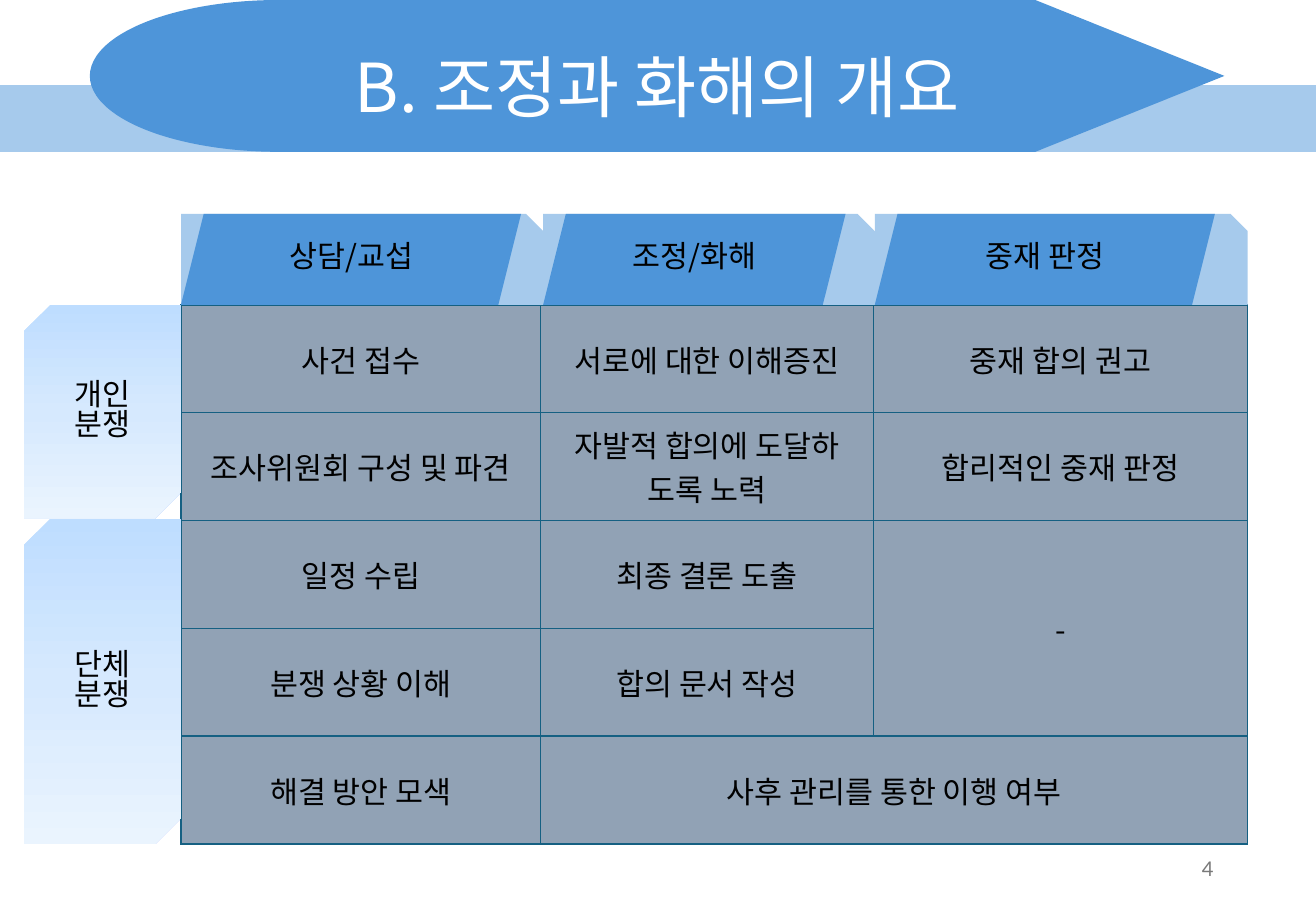
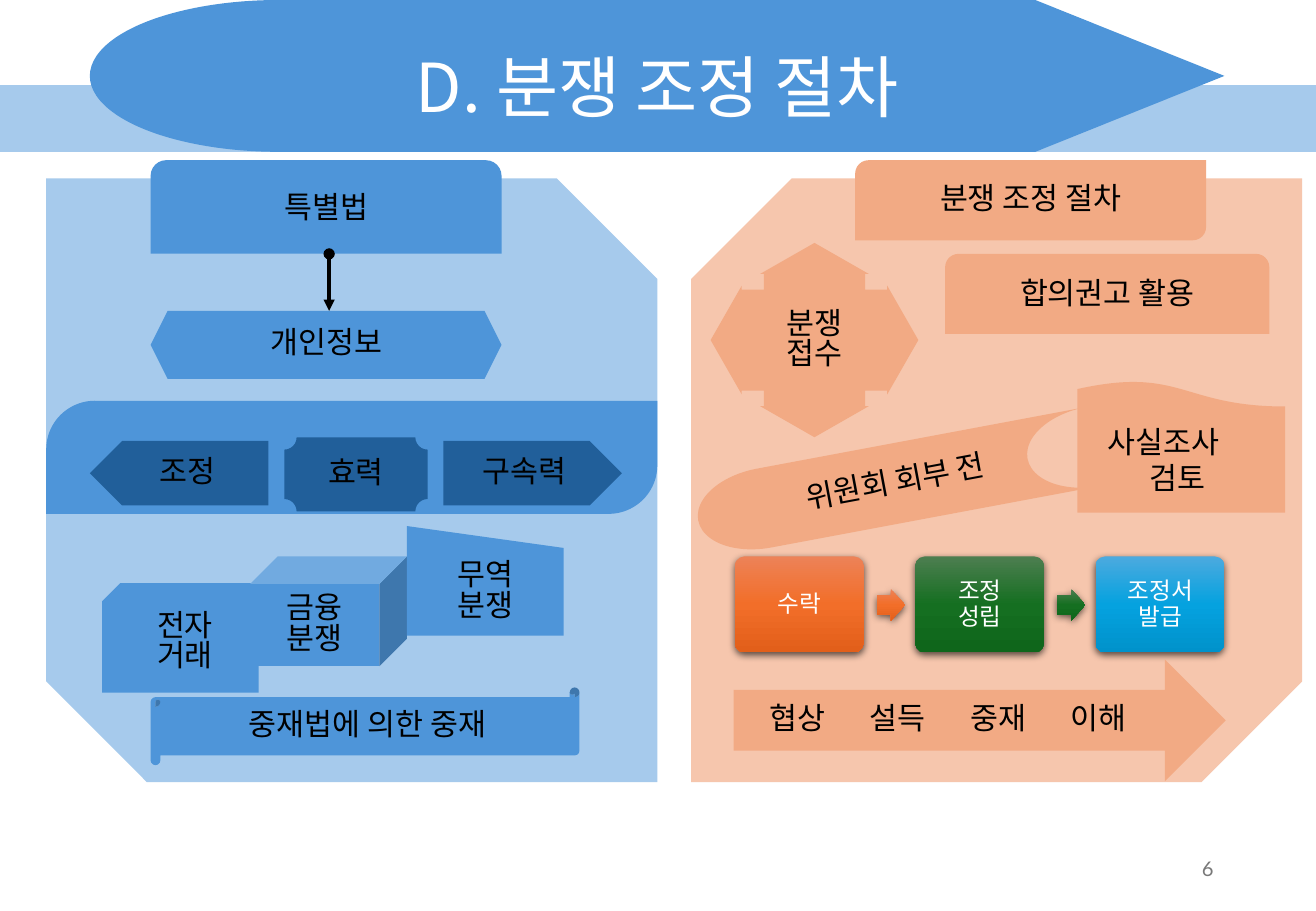
"""Build two slides on dispute mediation."""
from dataclasses import dataclass

from lxml.etree import SubElement as Sub
from pptx import Presentation
from pptx.dml.color import RGBColor as Rgb
from pptx.enum.shapes import MSO_CONNECTOR as Conn, MSO_SHAPE as Kind
from pptx.enum.text import MSO_ANCHOR as Anchor, MSO_AUTO_SIZE as Auto, PP_ALIGN as Align
from pptx.oxml import parse_xml
from pptx.oxml.ns import nsdecls, qn
from pptx.util import Pt


@dataclass(frozen=True)
class Theme:
    """Hold the colours, fonts and type sizes."""
    blue: str = "4E95D9"
    pale: str = "A6CAEC"
    deep: str = "215F9A"
    peach: str = "F2AA84"
    cream: str = "F6C6AD"
    cell: str = "91A2B5"
    edge: str = "156082"
    ink: str = "000000"
    white: str = "FFFFFF"
    gray: str = "797979"
    sky: tuple = ("BEDDFF", "D6E9FE", "EAF4FE")
    fire: tuple = ("ED8257", "F26E29", "E25F1A")
    leaf: tuple = ("4D7E50", "156F21", "0F661B")
    sea: tuple = ("4CAADF", "05A2DF", "0092CB")
    sans: str = "Noto Sans CJK KR"
    lato: str = "Lato"
    head: int = 40
    body: int = 18
    step: int = 14
    small: int = 12
    tight: float = 0.83
    close: float = 0.9


T = Theme()


def pts(*vals):
    """Turn numbers of points into lengths."""
    return [Pt(val) for val in vals]


def style(para, size=T.body, color=T.ink, face=T.sans, align=Align.CENTER, space=None):
    """Format a paragraph and its runs."""
    para.alignment = align
    if space:
        para.line_spacing = space
    for run in para.runs:
        run.font.size = Pt(size)
        run.font.color.rgb = Rgb.from_string(color)
        run.font.name = face
        Sub(run._r.get_or_add_rPr(), qn("a:ea"), typeface=face)


def write(frame, text, **look):
    """Put one paragraph into a text frame."""
    para = frame.paragraphs[0]
    para.text = text
    style(para, **look)


def blend(shape, tones):
    """Fill a shape with a vertical three-colour gradient."""
    stops = "".join(f'<a:gs pos="{n * 50000}"><a:srgbClr val="{tone}"/></a:gs>'
                    for n, tone in enumerate(tones))
    shape.element.spPr.append(parse_xml(
        f'<a:gradFill {nsdecls("a")} rotWithShape="1"><a:gsLst>{stops}</a:gsLst>'
        '<a:lin ang="5400000" scaled="0"/></a:gradFill>'))


def shade(shape):
    """Give a shape a soft shadow below."""
    effects = shape.element.spPr.find(qn("a:effectLst"))
    outer = Sub(effects, qn("a:outerShdw"), blurRad=str(Pt(4.5)), dist=str(Pt(1.5)),
                dir="5400000", algn="ctr", rotWithShape="0")
    tone = Sub(outer, qn("a:srgbClr"), val=T.ink)
    Sub(tone, qn("a:alpha"), val="63000")


def draw(slide, kind, box, fill, text="", flip="", adj=(), turn=0):
    """Add a preset shape with an optional label."""
    shape = slide.shapes.add_shape(kind, *pts(*box))
    if isinstance(fill, tuple):
        blend(shape, fill)
    else:
        shape.fill.solid()
        shape.fill.fore_color.rgb = Rgb.from_string(fill)
    shape.line.fill.background()
    shape.shadow.inherit = False
    shape.rotation = turn
    for n, val in enumerate(adj):
        shape.adjustments[n] = val
    if flip:
        shape.element.spPr.find(qn("a:xfrm")).set("flip" + flip, "1")
    if text:
        write(shape.text_frame, text, space=T.tight)
    return shape


def label(slide, box, text, anchor=Anchor.TOP, inset=None, grow=True, **look):
    """Add a wrapping text box."""
    frame = slide.shapes.add_textbox(*pts(*box)).text_frame
    frame.word_wrap = True
    frame.vertical_anchor = anchor
    frame.auto_size = Auto.SHAPE_TO_FIT_TEXT if grow else Auto.NONE
    if inset:
        frame.margin_left = frame.margin_right = Pt(inset)
        frame.margin_top = frame.margin_bottom = Pt(inset)
    write(frame, text, **look)
    return frame


def start(deck, layout, title, page):
    """Add a slide with its title and page number."""
    slide = deck.slides.add_slide(layout)
    head = slide.shapes.title
    head.left, head.top, head.width, head.height = pts(53.3, 1.4, 672.5, 104.4)
    head.text_frame.vertical_anchor = Anchor.MIDDLE
    head.text_frame.auto_size = Auto.NONE
    write(head.text_frame, title, size=T.head, color=T.white, space=T.close)
    label(slide, (550.8, 500.4, 175.7, 28.8), page, Anchor.MIDDLE, grow=False,
          size=T.small, color=T.gray, face=T.lato, align=Align.RIGHT)
    return slide


def brand(slide, layout):
    """Put the title bands on the shared layout."""
    tree = layout.shapes.element
    for holder in list(layout.placeholders)[1:]:
        tree.remove(holder.element)
    bands = (draw(slide, Kind.RECTANGLE, (0, 50.4, 780, 39.6), T.pale),
             draw(slide, Kind.FLOWCHART_DISPLAY, (53.3, 0, 672.5, 90), T.blue, flip="H"))
    for n, band in enumerate(bands, 2):
        tree.insert(n, band.element)


def border(cell):
    """Draw the four edges of a table cell."""
    props = cell._tc.get_or_add_tcPr()
    for n, side in enumerate("LRTB"):
        props.insert(n, parse_xml(
            f'<a:ln{side} {nsdecls("a")} w="{Pt(1)}"><a:solidFill>'
            f'<a:srgbClr val="{T.edge}"/></a:solidFill></a:ln{side}>'))


def grid(slide, left, top, cols, tall, rows, spans):
    """Add a bordered table with merged cells."""
    table = slide.shapes.add_table(len(rows), len(cols), *pts(
        left, top, sum(cols), tall * len(rows))).table
    table.first_row = table.horz_banding = False
    for col, wide in zip(table.columns, cols):
        col.width = Pt(wide)
    for r, row in enumerate(rows):
        table.rows[r].height = Pt(tall)
        for c, text in enumerate(row):
            cell = table.cell(r, c)
            cell.fill.solid()
            cell.fill.fore_color.rgb = Rgb.from_string(T.cell)
            cell.vertical_anchor = Anchor.MIDDLE
            border(cell)
            if text:
                write(cell.text_frame, text)
    for first, last in spans:
        table.cell(*first).merge(table.cell(*last))


def arrow(slide, x, top, end):
    """Add a downward line from a dot to an arrowhead."""
    line = slide.shapes.add_connector(Conn.STRAIGHT, *pts(x, top, x, end))
    line.line.color.rgb = Rgb.from_string(T.ink)
    line.line.width = Pt(2.25)
    props = line.element.spPr
    edge = props.find(qn("a:ln"))
    Sub(edge, qn("a:headEnd"), type="oval")
    Sub(edge, qn("a:tailEnd"), type="triangle")
    Sub(props, qn("a:effectLst"))


def outline(slide):
    """Fill the overview slide."""
    left, top, tall = 107.3, 180.7, 63.94
    grid(slide, left, top, (213.1, 197.3, 221.8), tall, (
        ("사건 접수", "서로에 대한 이해증진", "중재 합의 권고"),
        ("조사위원회 구성 및 파견", "자발적 합의에 도달하\n도록 노력", "합리적인 중재 판정"),
        ("일정 수립", "최종 결론 도출", "-"),
        ("분쟁 상황 이해", "합의 문서 작성", ""),
        ("해결 방안 모색", "사후 관리를 통한 이행 여부", ""),
    ), (((2, 2), (3, 2)), ((4, 1), (4, 2))))
    x = left
    for text, wide, face in (("상담/교섭", 214.6, 201.6), ("조정/화해", 196.6, 179.3),
                             ("중재 판정", 221, 201.6)):
        draw(slide, Kind.SNIP_1_RECTANGLE, (x, 126.7, wide, 54), T.pale, adj=(0.19,))
        draw(slide, Kind.PARALLELOGRAM, (x, 126.7, face, 54), T.blue)
        label(slide, (x + 22.3, 136.8, face - 44.6, 28.8), text, Anchor.MIDDLE)
        x += wide
    y = top
    for text, high in (("개인\n분쟁", 126.7), ("단체\n분쟁", 193)):
        draw(slide, Kind.SNIP_2_DIAG_RECTANGLE, (14.4, y, 92.9, high), T.sky, text, "H")
        y += high


def laws(slide):
    """Draw the blue panel on the left."""
    draw(slide, Kind.SNIP_2_DIAG_RECTANGLE, (27.4, 105.8, 362.2, 357.8), T.pale)
    draw(slide, Kind.ROUND_2_SAME_RECTANGLE, (89.3, 95, 208, 55.4), T.blue, "특별법")
    draw(slide, Kind.HEXAGON, (89.3, 184.3, 208, 40.3), T.blue, "개인정보")
    arrow(slide, 195.1, 150.5, 184.3)
    draw(slide, Kind.ROUND_2_DIAG_RECTANGLE, (27.4, 237.6, 362.2, 67), T.blue, adj=(0.43, 0))
    draw(slide, Kind.PENTAGON, (53.3, 261.4, 105.8, 38.2), T.deep, "조정", "H")
    draw(slide, Kind.PLAQUE, (168.5, 259.2, 85, 43.9), T.deep, "효력")
    draw(slide, Kind.PENTAGON, (262.8, 261.4, 105.8, 38.2), T.deep, "구속력")
    draw(slide, Kind.HORIZONTAL_SCROLL, (89.3, 407.5, 254.2, 46.1), T.blue, "중재법에 의한 중재")
    for kind, x, y, text, flip in (
            (Kind.SNIP_1_RECTANGLE, 60.5, 345.6, "전자\n거래", "H"),
            (Kind.CUBE, 148.3, 329.8, "금융\n분쟁", ""),
            (Kind.FLOWCHART_MANUAL_INPUT, 241.2, 311.8, "무역\n분쟁", "H")):
        draw(slide, kind, (x, y, 92.9, 65), T.blue, text, flip)


def steps(slide):
    """Draw the orange panel on the right."""
    draw(slide, Kind.SNIP_2_DIAG_RECTANGLE, (409.7, 105.8, 362.2, 357.8), T.cream, flip="H")
    draw(slide, Kind.ROUND_2_DIAG_RECTANGLE, (506.9, 95, 208, 47.5), T.peach, "분쟁 조정 절차")
    draw(slide, Kind.QUAD_ARROW, (421.2, 144, 123.1, 115.2), T.peach, "분쟁\n접수",
         adj=(0.52, 0.28, 0.16))
    draw(slide, Kind.ROUND_2_SAME_RECTANGLE, (560.2, 150.5, 192.2, 47.5), T.peach, "합의권고 활용")
    draw(slide, Kind.FLOWCHART_STORED_DATA, (411.8, 262.8, 238.3, 47.5), T.peach,
         "위원회 회부 전", turn=349.4)
    draw(slide, Kind.FLOWCHART_DOCUMENT, (638.6, 225.4, 123.1, 78.5), T.peach, flip="V")
    plain = dict(face=T.lato, align=Align.LEFT)
    frame = label(slide, (649.4, 247, 94.3, 51.1), "사실조사", **plain)
    para = frame.add_paragraph()
    para.text = "검토"
    para._p.get_or_add_pPr().set("marL", str(Pt(25)))
    style(para, **plain)
    chain = (("수락", T.fire), ("조정\n성립", T.leaf), ("조정서\n발급", T.sea))
    for n, (text, tones) in enumerate(chain):
        x = 435.6 + 106.9 * n
        shade(draw(slide, Kind.ROUNDED_RECTANGLE, (x, 329.8, 76.3, 56.9), tones, adj=(0.1,)))
        label(slide, (x + 1.6, 331.9, 73.4, 53.3), text, Anchor.MIDDLE, 4.3, False,
              size=T.step, color=T.white, face=T.lato, space=T.close)
        if n < len(chain) - 1:
            shade(draw(slide, Kind.RIGHT_ARROW, (x + 84.2, 349.2, 16.6, 18.7), tones,
                       adj=(0.6, 0.5)))
    draw(slide, Kind.RIGHT_ARROW, (434.9, 391, 291.6, 72), T.peach)
    for n, text in enumerate(("협상", "설득", "중재", "이해")):
        label(slide, (449 + 59.5 * n, 411.1, 57.6, 28.8), text, **plain)


def main():
    """Build and save the deck."""
    deck = Presentation()
    deck.slide_width, deck.slide_height = pts(780, 540)
    layout = deck.slide_layouts[5]
    slide = start(deck, layout, "B. 조정과 화해의 개요", "4")
    brand(slide, layout)
    outline(slide)
    slide = start(deck, layout, "D. 분쟁 조정 절차", "6")
    laws(slide)
    steps(slide)
    deck.save("out.pptx")


if __name__ == "__main__":
    main()
